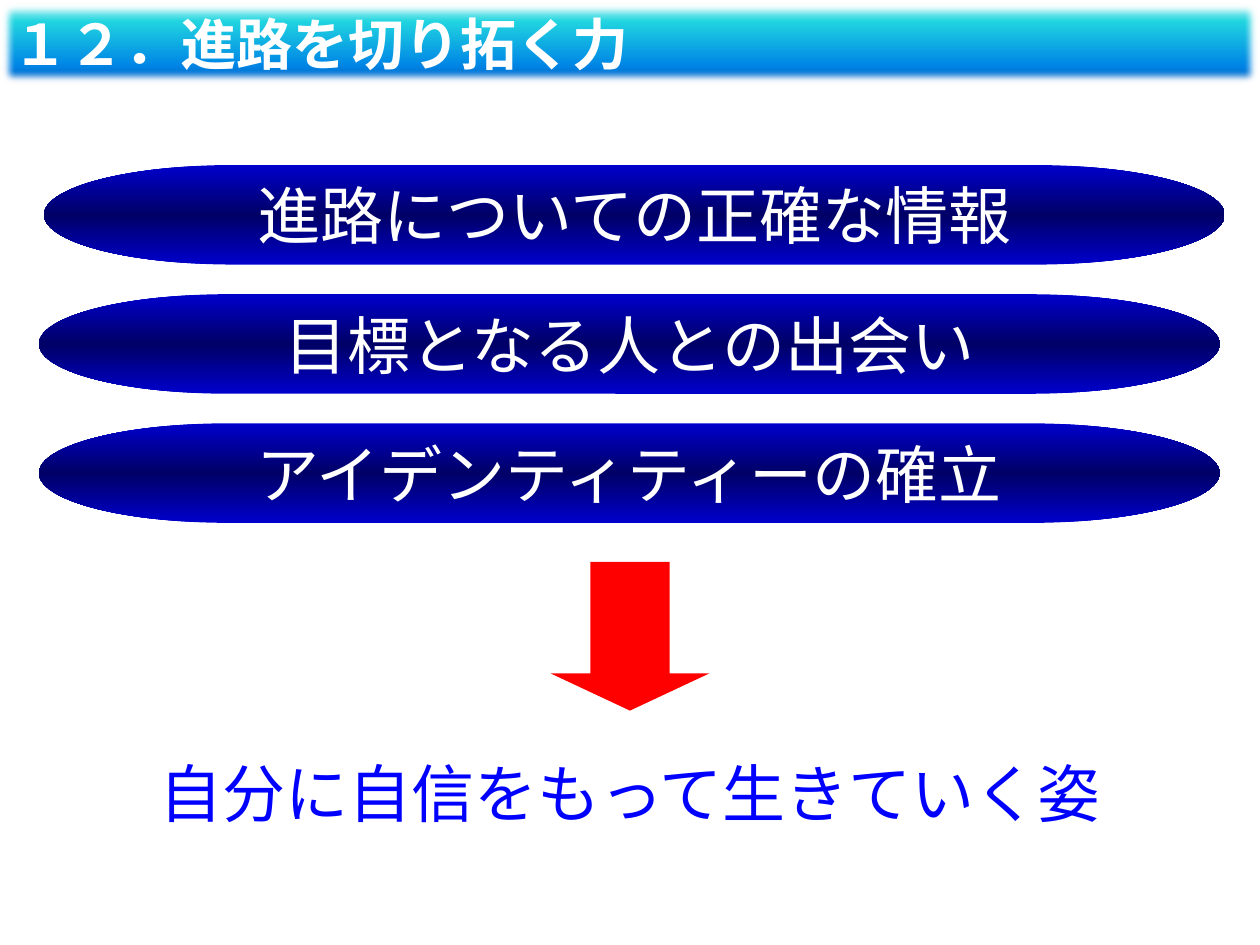
from lxml import etree
from pptx import Presentation
from pptx.dml.color import RGBColor
from pptx.enum.shapes import MSO_SHAPE
from pptx.enum.text import MSO_ANCHOR, PP_ALIGN
from pptx.oxml.ns import qn
from pptx.util import Inches, Pt

COLORS = {
    "white": "FFFFFF", "cyan": "21D6E0", "sky": "0087E6", "ocean": "005CBF",
    "blue": "0000CC", "navy": "000066", "red": "FF0000", "goal": "0000FF",
}
JAPANESE_FONT = "Noto Sans CJK JP"


def fill_gradient(shape, stops):
    """Fill a shape from top to bottom with (percent, colour name) stops."""
    shape.shadow.inherit = False
    shape.line.fill.background()
    shape.fill.gradient()
    shape.fill.gradient_angle = 270
    stop_list = shape._element.spPr.find(".//" + qn("a:gsLst"))
    for old_stop in list(stop_list):
        stop_list.remove(old_stop)
    for percent, color in stops:
        stop = etree.SubElement(stop_list, qn("a:gs"), pos=str(percent * 1000))
        etree.SubElement(stop, qn("a:srgbClr"), val=COLORS[color])


def write_text(box, text, size, color, font, align, bold=False):
    frame = box.text_frame
    frame.word_wrap = False
    frame.vertical_anchor = MSO_ANCHOR.MIDDLE
    para = frame.paragraphs[0]
    para.alignment = align
    span = para.add_run()
    span.text = text
    span.font.size = Pt(size)
    span.font.bold = bold
    span.font.name = font
    span.font.color.rgb = RGBColor.from_string(COLORS[color])
    etree.SubElement(span.font._element, qn("a:ea"), typeface=JAPANESE_FONT)


deck = Presentation()
deck.slide_width, deck.slide_height = Inches(10), Inches(7.5)
page = deck.slides.add_slide(deck.slide_layouts[6])

# Three conditions
conditions = [
    (0.35, "進路についての正確な情報"),
    (0.31, "目標となる人との出会い"),
    (0.31, "アイデンティティーの確立"),
]
for row, (left, text) in enumerate(conditions):
    pill = page.shapes.add_shape(
        MSO_SHAPE.FLOWCHART_TERMINATOR,
        Inches(left), Inches(1.31 + row * 1.025), Inches(9.37), Inches(0.79))
    fill_gradient(pill, [(0, "blue"), (50, "navy"), (100, "blue")])
    write_text(pill, text, 36, "white", "Arial", PP_ALIGN.CENTER)

# Arrow to the goal
arrow = page.shapes.add_shape(
    MSO_SHAPE.DOWN_ARROW, Inches(4.37), Inches(4.46), Inches(1.26), Inches(1.18))
arrow.adjustments[0] = 0.5
arrow.adjustments[1] = 0.25
arrow.shadow.inherit = False
arrow.fill.solid()
arrow.fill.fore_color.rgb = RGBColor.from_string(COLORS["red"])
arrow.line.fill.background()

# Goal
goal = page.shapes.add_textbox(Inches(0.43), Inches(5.88), Inches(9.14), Inches(0.81))
write_text(goal, "自分に自信をもって生きていく姿", 36, "goal", JAPANESE_FONT, PP_ALIGN.CENTER)

# Title bar with soft edges
title = page.shapes.add_shape(MSO_SHAPE.RECTANGLE, 0, 0, Inches(10), Inches(0.68))
fill_gradient(title, [(0, "white"), (25, "cyan"), (75, "sky"), (100, "ocean")])
effects = title._element.spPr.find(qn("a:effectLst"))
etree.SubElement(effects, qn("a:softEdge"), rad=str(Pt(5)))
write_text(title, "１２．進路を切り拓く力", 32, "white", JAPANESE_FONT, PP_ALIGN.LEFT, bold=True)

deck.save("out.pptx")
